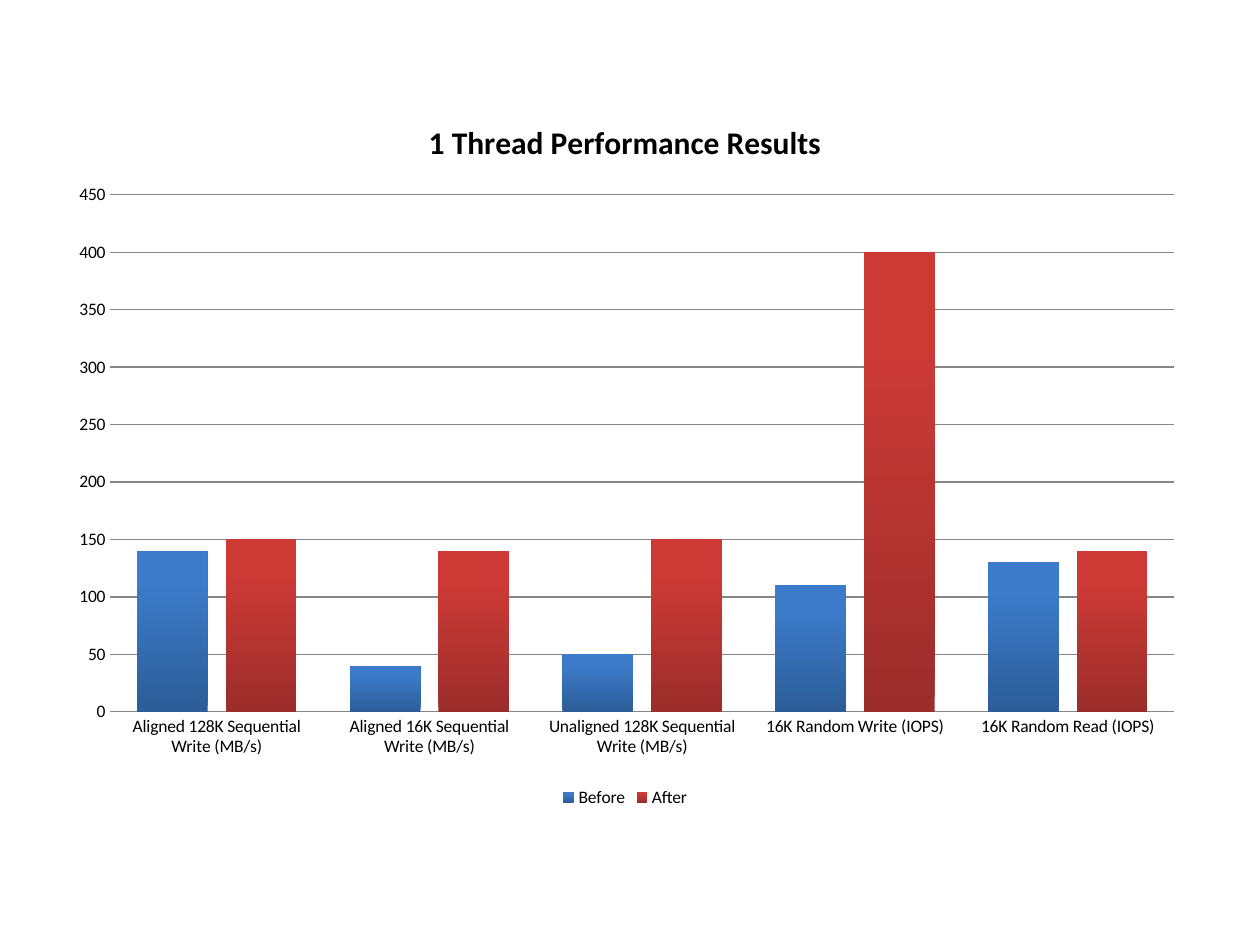
from lxml import etree
from pptx import Presentation
from pptx.chart.data import CategoryChartData
from pptx.dml.color import RGBColor
from pptx.enum.chart import XL_CHART_TYPE as ChartType
from pptx.enum.chart import XL_LEGEND_POSITION as LegendPos
from pptx.enum.chart import XL_TICK_MARK as TickMark
from pptx.oxml.ns import qn
from pptx.util import Cm, Pt

CATEGORIES = [
    "Aligned 128K Sequential Write (MB/s)",
    "Aligned 16K Sequential Write (MB/s)",
    "Unaligned 128K Sequential Write (MB/s)",
    "16K Random Write (IOPS)",
    "16K Random Read (IOPS)",
]
# name, values, colour at the foot of a bar, colour at its top
SERIES = [
    ("Before", (140, 40, 50, 110, 130), "2C5D98", "3C7BC9"),
    ("After", (150, 140, 150, 400, 140), "9B2D2A", "CD3A36"),
]


def rgb(value):
    return RGBColor.from_string(value)


def format_font(font, size, color, name, bold=False):
    font.size = Pt(size)
    font.color.rgb = rgb(color)
    font.name = name
    font.bold = bold


def write(tf, text, **fmt):
    p = tf.paragraphs[0]
    r = p.add_run()
    r.text = text
    format_font(r.font, **fmt)


def place_plot(chart, **fractions):
    """Fix the inner plot area, in fractions of the chart frame."""
    area = chart._chartSpace.chart.plotArea
    for old in area.findall(qn("c:layout")):
        area.remove(old)
    layout = etree.Element(qn("c:layout"))
    manual = etree.SubElement(layout, qn("c:manualLayout"))
    settings = dict(layoutTarget="inner", xMode="edge", yMode="edge", **fractions)
    for tag, value in settings.items():
        etree.SubElement(manual, qn(f"c:{tag}")).set("val", str(value))
    area.insert(0, layout)


class Deck:
    font = "Calibri"
    text_color = "000000"
    line_color = "868686"

    def __init__(self, prs):
        self.s = prs.slides.add_slide(prs.slide_layouts[6])

    def text_format(self, size, bold=False):
        return dict(size=size, color=self.text_color, name=self.font, bold=bold)

    def style_line(self, line):
        line.color.rgb = rgb(self.line_color)
        line.width = Pt(0.75)

    def style_axes(self, chart):
        cat, val = chart.category_axis, chart.value_axis
        for axis in (cat, val):
            axis.major_tick_mark = axis.minor_tick_mark = TickMark.NONE
        self.style_line(cat.format.line)
        val.format.line.fill.background()
        val.minimum_scale, val.maximum_scale, val.major_unit = 0, 450, 50
        val.has_major_gridlines = True
        self.style_line(val.major_gridlines.format.line)

    def column_chart(self, title, categories, series, left, top, width, height):
        data = CategoryChartData(number_format="General")
        data.categories = categories
        for name, values, *_ in series:
            data.add_series(name, values)
        chart = self.s.shapes.add_chart(
            ChartType.COLUMN_CLUSTERED,
            Cm(left), Cm(top), Cm(width), Cm(height), data).chart
        format_font(chart.font, **self.text_format(10))

        chart.has_title = True
        write(chart.chart_title.text_frame, title, **self.text_format(18, bold=True))
        chart.has_legend = True
        chart.legend.position = LegendPos.BOTTOM
        chart.legend.include_in_layout = False
        self.style_axes(chart)

        plot = chart.plots[0]
        plot.gap_width, plot.overlap = 75, -25
        plot.vary_by_categories = False
        for bars, (_, _, foot, head) in zip(plot.series, series):
            bars.invert_if_negative = False
            bars.format.line.fill.background()
            fill = bars.format.fill
            fill.gradient()
            fill.gradient_angle = 90
            for stop, color, position in zip(fill.gradient_stops, (foot, head), (0, 0.8)):
                stop.color.rgb = rgb(color)
                stop.position = position
        return chart


def main():
    prs = Presentation()
    prs.slide_width, prs.slide_height = Cm(25.4), Cm(19.05)
    deck = Deck(prs)
    chart = deck.column_chart("1 Thread Performance Results", CATEGORIES, SERIES,
                              left=1.07, top=1.9, width=23.06, height=14.48)
    place_plot(chart, x=0.05, y=0.14, w=0.93, h=0.72)
    prs.save("out.pptx")


if __name__ == "__main__":
    main()
